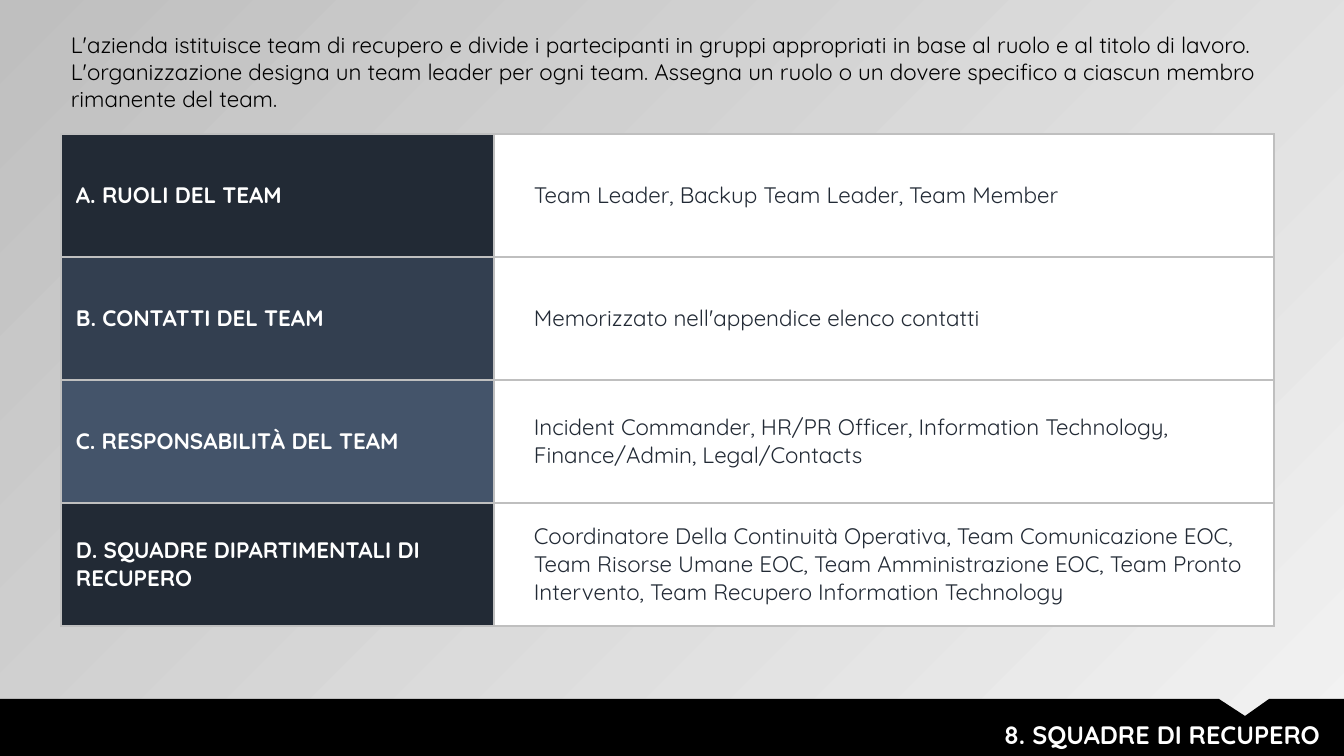
from lxml.etree import SubElement
from pptx import Presentation
from pptx.dml.color import RGBColor
from pptx.enum.text import MSO_ANCHOR as Anchor, MSO_AUTO_SIZE as AutoSize, PP_ALIGN as Align
from pptx.oxml.ns import qn
from pptx.util import Pt

# Content
TITLE = "8. SQUADRE DI RECUPERO"
INTRO = (
    "L'azienda istituisce team di recupero e divide i partecipanti in gruppi appropriati "
    "in base al ruolo e al titolo di lavoro. L'organizzazione designa un team leader per "
    "ogni team. Assegna un ruolo o un dovere specifico a ciascun membro rimanente del team."
)
TEAM_ROWS = [
    ("A. RUOLI DEL TEAM", "222A35", "Team Leader, Backup Team Leader, Team Member"),
    ("B. CONTATTI DEL TEAM", "333F50", "Memorizzato nell'appendice elenco contatti"),
    ("C. RESPONSABILITÀ DEL TEAM", "44546A",
     "Incident Commander, HR/PR Officer, Information Technology, "
     "Finance/Admin, Legal/Contacts"),
    ("D. SQUADRE DIPARTIMENTALI DI RECUPERO", "222A35",
     "Coordinatore Della Continuità Operativa, Team Comunicazione EOC, "
     "Team Risorse Umane EOC, Team Amministrazione EOC, Team Pronto Intervento, "
     "Team Recupero Information Technology"),
]

# Layout in px
SLIDE_WIDTH, SLIDE_HEIGHT = 1344, 756
LEFT = 61
COLUMN_WIDTHS = (433, 780)
TABLE_WIDTH = sum(COLUMN_WIDTHS)
TABLE_TOP, ROW_HEIGHT = 134, 123
CELL_INSET, DETAIL_INSET = 15, 40
BAR_TOP = 699
NOTCH = [(1219, BAR_TOP), (1245, 716), (1269, BAR_TOP)]
FONT = "Quicksand"
WHITE, BLACK, DARK, GREY, LIGHT = "FFFFFF", "000000", "222A35", "BFBFBF", "F2F2F2"
EMU_PER_PX = 914400 / 100.8


def px(length):
    return round(length * EMU_PER_PX)


def color(value):
    return RGBColor.from_string(value)


def add_run(paragraph, text, size, text_color, bold=False):
    run = paragraph.add_run()
    run.text = text
    run.font.name = FONT
    run.font.size = Pt(size)
    run.font.bold = bold
    run.font.color.rgb = color(text_color)


def set_borders(cell, line_color, width):
    properties = cell._tc.get_or_add_tcPr()
    for index, side in enumerate(("lnL", "lnR", "lnT", "lnB")):
        line = SubElement(properties, qn(f"a:{side}"), w=str(Pt(width)))
        fill = SubElement(line, qn("a:solidFill"))
        SubElement(fill, qn("a:srgbClr"), val=line_color)
        properties.insert(index, line)


def fill_cell(cell, text, fill, text_color, bold, left_inset):
    cell.fill.solid()
    cell.fill.fore_color.rgb = color(fill)
    cell.vertical_anchor = Anchor.MIDDLE
    cell.margin_left = px(left_inset)
    cell.margin_right = cell.margin_top = cell.margin_bottom = px(CELL_INSET)
    add_run(cell.text_frame.paragraphs[0], text, 16, text_color, bold)
    set_borders(cell, GREY, 1)


presentation = Presentation()
presentation.slide_width = px(SLIDE_WIDTH)
presentation.slide_height = px(SLIDE_HEIGHT)
slide = presentation.slides.add_slide(presentation.slide_layouts[5])
shapes = slide.shapes

# Background gradient
background = slide.background.fill
background.gradient()
background.gradient_angle = 135
for stop, stop_color in zip(background.gradient_stops, (LIGHT, GREY)):
    stop.color.rgb = color(stop_color)

# Team table
table = shapes.add_table(
    len(TEAM_ROWS), len(COLUMN_WIDTHS), px(LEFT), px(TABLE_TOP),
    px(TABLE_WIDTH), px(ROW_HEIGHT * len(TEAM_ROWS)),
).table
table.first_row = table.horz_banding = False
for column, width in zip(table.columns, COLUMN_WIDTHS):
    column.width = px(width)
for row, (heading, heading_fill, detail) in zip(table.rows, TEAM_ROWS):
    row.height = px(ROW_HEIGHT)
    heading_cell, detail_cell = row.cells
    fill_cell(heading_cell, heading, heading_fill, WHITE, True, CELL_INSET)
    fill_cell(detail_cell, detail, WHITE, DARK, False, DETAIL_INSET)

# Notched bottom bar
builder = shapes.build_freeform(0, BAR_TOP, scale=EMU_PER_PX)
builder.add_line_segments(
    NOTCH + [(SLIDE_WIDTH, BAR_TOP), (SLIDE_WIDTH, SLIDE_HEIGHT), (0, SLIDE_HEIGHT)]
)
bar = builder.convert_to_shape()
bar.shadow.inherit = False
bar.fill.solid()
bar.fill.fore_color.rgb = color(BLACK)
bar.line.fill.background()

# Title on the bar
title = shapes.title
title.left, title.top, title.width, title.height = px(417), px(714), px(913), px(40)
title.text_frame.auto_size = AutoSize.NONE
title.text_frame.vertical_anchor = Anchor.TOP
title_paragraph = title.text_frame.paragraphs[0]
title_paragraph.alignment = Align.RIGHT
add_run(title_paragraph, TITLE, 18, WHITE, True)
bar.element.addnext(title.element)

# Introduction
intro = shapes.add_textbox(px(LEFT), px(26), px(TABLE_WIDTH), px(92))
intro.text_frame.word_wrap = True
add_run(intro.text_frame.paragraphs[0], INTRO, 16, BLACK)

presentation.save("out.pptx")
